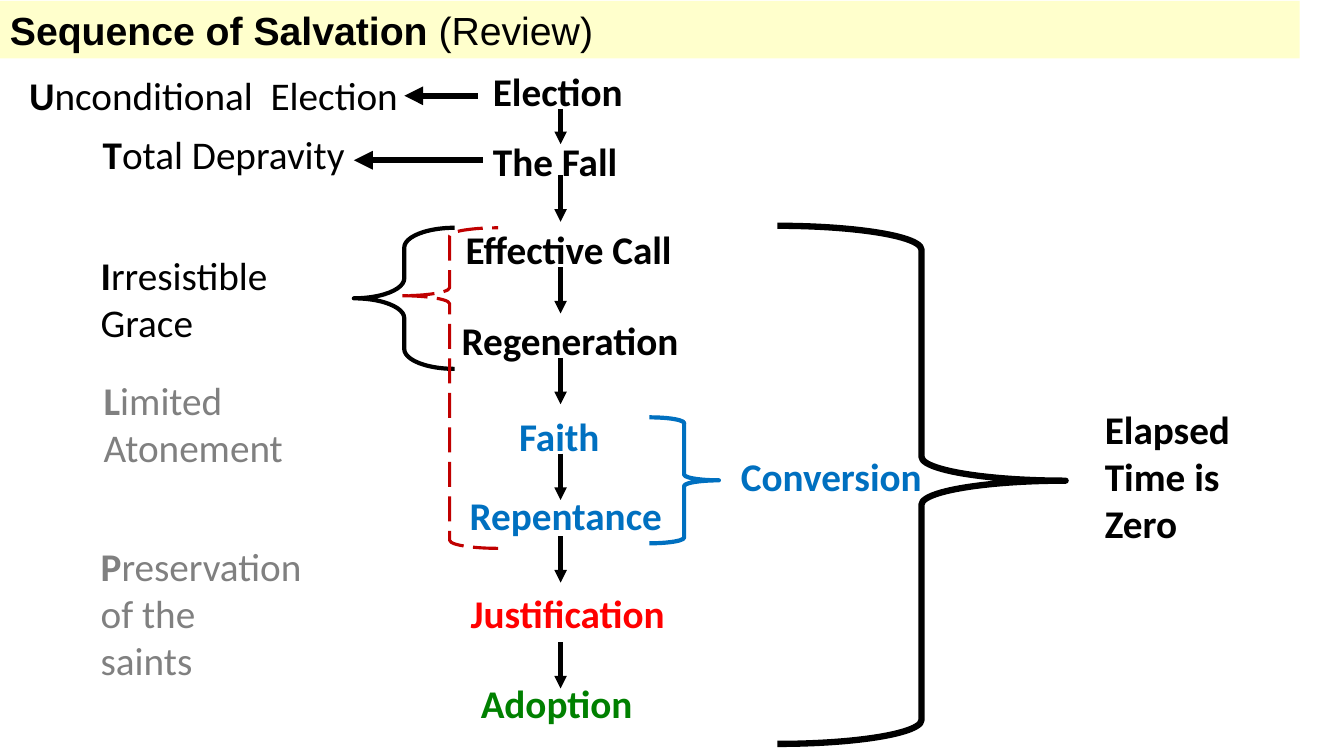
from pptx import Presentation
from pptx.dml.color import RGBColor
from pptx.enum.dml import MSO_LINE
from pptx.enum.shapes import MSO_CONNECTOR, MSO_SHAPE
from pptx.enum.text import MSO_ANCHOR, PP_ALIGN
from pptx.oxml.ns import qn
from pptx.util import Inches, Pt
from lxml.etree import SubElement

BLACK = RGBColor(0x00, 0x00, 0x00)
BLUE = RGBColor(0x00, 0x70, 0xC0)
RED = RGBColor(0xFF, 0x00, 0x00)
DARK_RED = RGBColor(0xC0, 0x00, 0x00)
GREEN = RGBColor(0x00, 0x80, 0x00)
GRAY = RGBColor(0x80, 0x80, 0x80)
CREAM = RGBColor(0xFF, 0xFF, 0xCC)

LINE_H = 0.57
STEPS = [
    ("Election", 4.79, 0.62, 2.15, BLACK),
    ("The Fall", 4.79, 1.31, 2.15, BLACK),
    ("Effective Call", 4.52, 2.19, 2.31, BLACK),
    ("Regeneration", 4.48, 3.09, 2.54, BLACK),
    ("Faith", 5.05, 4.04, 2.13, BLUE),
    ("Repentance", 4.56, 4.83, 2.15, BLUE),
    ("Justification", 4.57, 5.8, 2.15, RED),
    ("Adoption", 4.67, 6.69, 2.15, GREEN),
]
STEP_ARROWS = [(1.08, 0.35), (1.74, 0.46), (2.65, 0.46), (3.55, 0.46),
               (4.5, 0.46), (5.32, 0.46), (6.37, 0.46)]
POINTS = [
    (["Unconditional  Election"], (0.19, 0.66, 4, LINE_H), BLACK),
    (["Total Depravity"], (0.92, 1.24, 2.78, LINE_H), BLACK),
    (["Irresistible Grace"], (0.9, 2.44, 2.28, 1.04), BLACK),
    (["Limited Atonement"], (0.93, 3.68, 2.28, 1.04), GRAY),
    (["Preservation", "of the", "saints"], (0.9, 5.33, 2.28, 1.51), GRAY),
]


def add_runs(p, runs, color, font="Calibri"):
    """Write (text, bold) runs into a paragraph."""
    p.alignment = PP_ALIGN.LEFT
    for text, bold in runs:
        r = p.add_run()
        r.text = text
        for name, value in {"name": font, "size": Pt(28), "bold": bold}.items():
            setattr(r.font, name, value)
        r.font.color.rgb = color


def add_text(slide, box, paragraphs, color):
    """Add a wrapping text box with one list of runs per paragraph."""
    tf = slide.shapes.add_textbox(*map(Inches, box)).text_frame
    tf.word_wrap = True
    for i, runs in enumerate(paragraphs):
        p = tf.add_paragraph() if i else tf.paragraphs[0]
        add_runs(p, runs, color)


def add_arrow(slide, start, end, width):
    """Add a straight black arrow pointing at its end."""
    cxn = slide.shapes.add_connector(
        MSO_CONNECTOR.STRAIGHT, *map(Inches, start + end))
    cxn.line.color.rgb = BLACK
    cxn.line.width = Pt(width)
    SubElement(cxn.line._get_or_add_ln(), qn("a:tailEnd"), type="triangle")
    SubElement(cxn._element.spPr, qn("a:effectLst"))


def add_brace(slide, kind, box, color, width, curl=0.083, tip=0.5, dash=None):
    """Add an unfilled brace with the given curl and tip position."""
    sp = slide.shapes.add_shape(kind, *map(Inches, box))
    sp.shadow.inherit = False
    sp.fill.background()
    sp.adjustments[0], sp.adjustments[1] = curl, tip
    sp.line.color.rgb = color
    for name, value in {"width": Pt(width), "dash_style": dash}.items():
        setattr(sp.line, name, value)


def add_title(slide, box):
    """Add the cream title band."""
    sp = slide.shapes.add_shape(MSO_SHAPE.RECTANGLE, *map(Inches, box))
    sp.shadow.inherit = False
    sp.fill.solid()
    sp.fill.fore_color.rgb = CREAM
    sp.line.fill.background()
    tf = sp.text_frame
    for name, value in {"word_wrap": True,
                        "vertical_anchor": MSO_ANCHOR.MIDDLE}.items():
        setattr(tf, name, value)
    add_runs(tf.paragraphs[0],
             [("Sequence of Salvation ", True), ("(Review)", False)],
             BLACK, "Arial")


def add_sequence(slide, axis):
    """Add the column of steps joined by arrows along a vertical axis."""
    for text, x, y, w, color in STEPS:
        add_text(slide, (x, y, w, LINE_H), [[(text, True)]], color)
    for y, length in STEP_ARROWS:
        add_arrow(slide, (axis, y), (axis, y + length), 3)


def add_points(slide):
    """Add the five points on the left, each with a bold initial."""
    for lines, box, color in POINTS:
        first, *rest = lines
        runs = [[(first[0], True), (first[1:], False)]]
        add_text(slide, box, runs + [[(line, False)] for line in rest], color)
    add_arrow(slide, (4.74, 0.95), (4.01, 0.95), 4.5)
    add_arrow(slide, (4.79, 1.59), (3.51, 1.59), 4.5)


def add_groupings(slide):
    """Add the braces that group steps, with their labels."""
    left, right = MSO_SHAPE.LEFT_BRACE, MSO_SHAPE.RIGHT_BRACE
    add_brace(slide, left, (3.51, 2.26, 1, 1.4), BLACK, 3, curl=0.197)
    add_brace(slide, right, (6.44, 4.14, 0.69, 1.25), BLUE, 3)
    add_brace(slide, right, (7.71, 2.24, 2.86, 5.14), BLACK, 4.5, tip=0.492)
    add_brace(slide, left, (3.98, 2.26, 0.96, 3.18), DARK_RED, 2.25,
              tip=0.212, dash=MSO_LINE.LONG_DASH)
    add_text(slide, (7.25, 4.44, 2.15, LINE_H), [[("Conversion", True)]], BLUE)
    add_text(slide, (10.86, 3.97, 2.03, 1.51),
             [[("Elapsed Time is Zero", True)]], BLACK)


def main():
    """Build the slide and save it."""
    prs = Presentation()
    prs.slide_width, prs.slide_height = Inches(13.33), Inches(7.5)
    slide = prs.slides.add_slide(prs.slide_layouts[6])
    add_title(slide, (0, 0.01, 12.89, LINE_H))
    add_sequence(slide, 5.56)
    add_points(slide)
    add_groupings(slide)
    prs.save("out.pptx")


if __name__ == "__main__":
    main()
